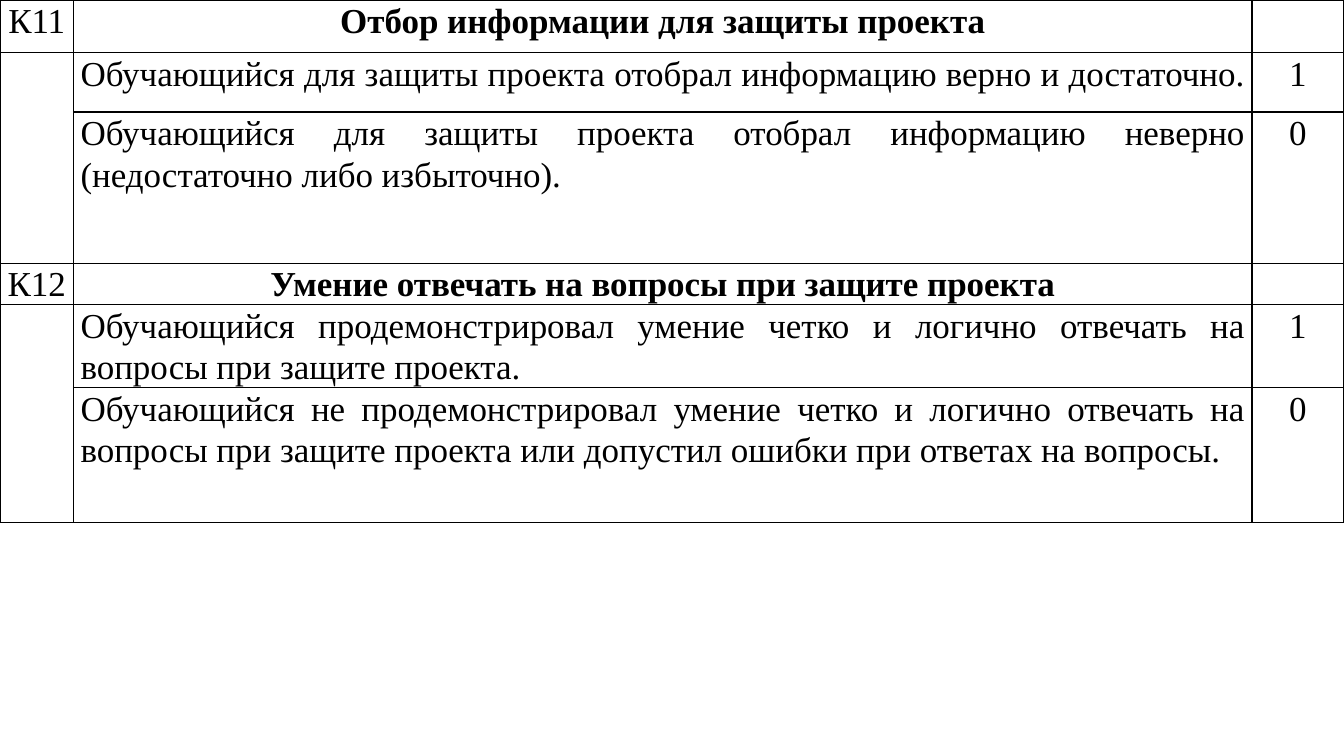
from lxml import etree
from pptx import Presentation
from pptx import util as u
from pptx.dml.color import RGBColor
from pptx.enum import text
from pptx.oxml import ns

BLACK = RGBColor(0, 0, 0)
FONT = "Times New Roman"
COLS = (1.85, 29.7, 2.32)
ROWS = (1.32, 1.5, 3.81, 0.97, 1.8, 3.4)
MARKS = (
    ("К11", "Отбор информации для защиты проекта", ""),
    ("", "Обучающийся для защиты проекта отобрал информацию верно и достаточно. ", "1"),
    ("", "Обучающийся для защиты проекта отобрал информацию неверно (недостаточно либо избыточно). ", "0"),
    ("К12", "Умение отвечать на вопросы при защите проекта", ""),
    ("", "Обучающийся продемонстрировал умение четко и логично отвечать на вопросы при защите проекта.", "1"),
    ("", "Обучающийся не продемонстрировал умение четко и логично отвечать на вопросы при защите проекта "
         "или допустил ошибки при ответах на вопросы. ", "0"),
)


def edge(cell):
    """Draw a thin black line on all four sides of a cell."""
    props = cell._tc.get_or_add_tcPr()
    for spot, side in enumerate(("lnL", "lnR", "lnT", "lnB")):
        line = etree.Element(ns.qn("a:" + side), w=str(u.Pt(1)))
        fill = etree.SubElement(line, ns.qn("a:solidFill"))
        etree.SubElement(fill, ns.qn("a:srgbClr"), val=str(BLACK))
        props.insert(spot, line)


def write(cell, words, align, bold):
    """Put words into a cell and format the cell."""
    cell.margin_left = cell.margin_right = u.Cm(0.18)
    cell.margin_top = cell.margin_bottom = 0
    cell.fill.background()
    edge(cell)
    cell.text_frame.text = words
    para = cell.text_frame.paragraphs[0]
    para.alignment = align
    para.line_spacing = 1.07
    for run in para.runs:
        run.font.name = FONT
        run.font.size = u.Pt(25)
        run.font.bold = bold
        run.font.color.rgb = BLACK


def rubric(slide, left, top, width, height):
    """Place the table of criteria and points in the given box."""
    grid = slide.shapes.add_table(len(ROWS), len(COLS), left, top, width, height).table
    for col, size in zip(grid.columns, COLS):
        col.width = int(width * size / sum(COLS))
    for row, size in zip(grid.rows, ROWS):
        row.height = int(height * size / sum(ROWS))
    for r, line in enumerate(MARKS):
        head = bool(line[0])
        for c, words in enumerate(line):
            body = c == 1 and not head
            align = text.PP_ALIGN.JUSTIFY if body else text.PP_ALIGN.CENTER
            write(grid.cell(r, c), words, align, head and c == 1)
        if head:
            grid.cell(r + 1, 0).merge(grid.cell(r + 2, 0))


def main():
    """Build and save the slide."""
    deck = Presentation()
    deck.slide_width, deck.slide_height = u.Cm(33.87), u.Cm(19.05)
    slide = deck.slides.add_slide(deck.slide_layouts[6])
    rubric(slide, 0, 0, deck.slide_width, u.Cm(sum(ROWS)))
    deck.save("out.pptx")


if __name__ == "__main__":
    main()
